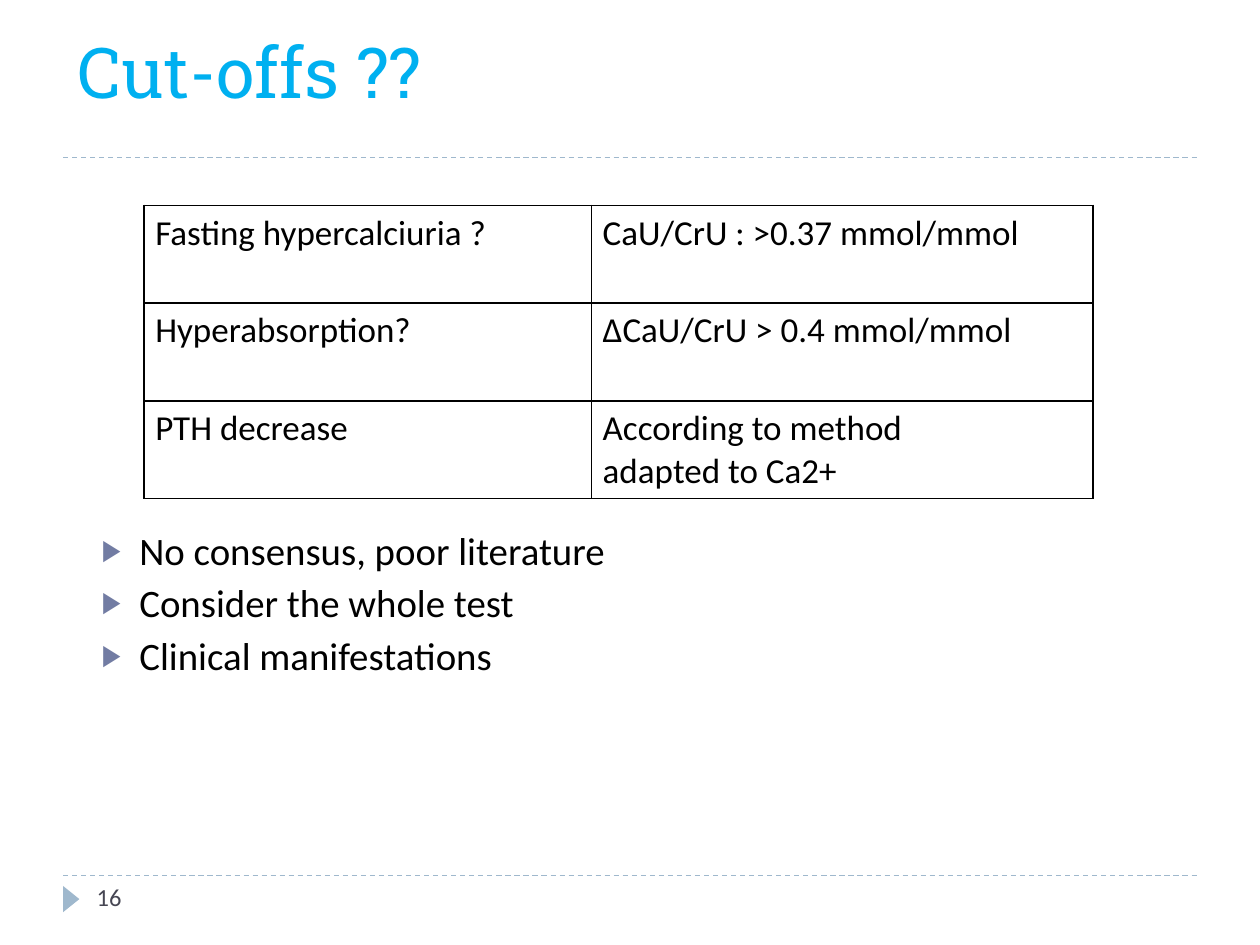
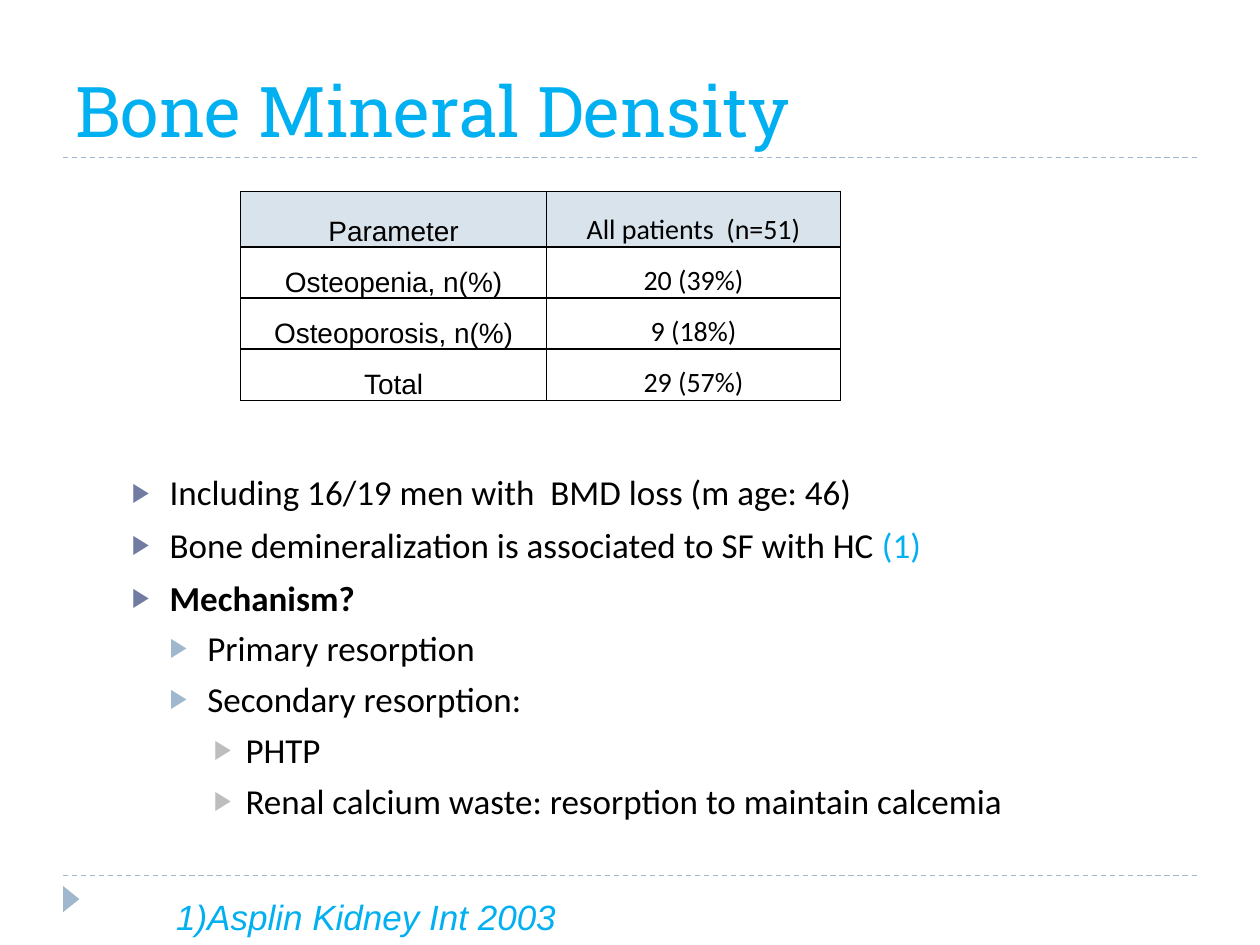
from lxml.etree import SubElement
from pptx import Presentation
from pptx.dml.color import RGBColor
from pptx.enum.dml import MSO_LINE
from pptx.enum.shapes import MSO_CONNECTOR, MSO_SHAPE
from pptx.enum.text import MSO_ANCHOR, PP_ALIGN
from pptx.oxml import parse_xml
from pptx.oxml.ns import nsdecls, qn
from pptx.util import Cm, Pt

BLACK = RGBColor(0x00, 0x00, 0x00)
WHITE = RGBColor(0xFF, 0xFF, 0xFF)
SKY = RGBColor(0x00, 0xB0, 0xF0)
SLATE = RGBColor(0x46, 0x46, 0x53)
INDIGO = RGBColor(0x72, 0x7C, 0xA3)
STEEL = RGBColor(0x9F, 0xB8, 0xCD)
SILVER = RGBColor(0xBD, 0xBD, 0xBD)
HEADER_BLUE = RGBColor(0xD9, 0xE3, 0xEB)

TITLE_FONT, BODY_FONT, LABEL_FONT = "Roboto Slab", "Calibri", "Arial"

# Per outline level: left margin (cm), hanging indent (cm), space before, bullet colour
LEVELS = [
    (0.76, 0.76, Pt(6), INDIGO),
    (1.52, 0.76, Pt(5), STEEL),
    (2.29, 0.64, Pt(5), SILVER),
]


def style_run(run, size, font=BODY_FONT, color=BLACK, bold=False, italic=False):
    run.font.size = Pt(size)
    run.font.name = font
    run.font.color.rgb = color
    run.font.bold = bold
    run.font.italic = italic


def add_bullet(paragraph, level):
    margin, hanging, space, color = LEVELS[level]
    paragraph.level = level
    paragraph.space_before = space
    properties = paragraph._p.get_or_add_pPr()
    properties.set("marL", str(Cm(margin)))
    properties.set("indent", str(-Cm(hanging)))
    bullet_color = SubElement(properties, qn("a:buClr"))
    SubElement(bullet_color, qn("a:srgbClr"), val=str(color))
    SubElement(properties, qn("a:buSzPct"), val="76000")
    SubElement(properties, qn("a:buFont"), typeface=LABEL_FONT)
    SubElement(properties, qn("a:buChar"), char="▶")


def add_borders(cell):
    properties = cell._tc.get_or_add_tcPr()
    for position, side in enumerate("LRTB"):
        properties.insert(position, parse_xml(
            f'<a:ln{side} {nsdecls("a")} w="{Pt(1)}"><a:solidFill>'
            f'<a:srgbClr val="{BLACK}"/></a:solidFill></a:ln{side}>'))


class Deck:
    """Holds the presentation, its shared style and the current page."""

    def __init__(self):
        self.presentation = Presentation()
        self.presentation.slide_width = Cm(25.4)
        self.presentation.slide_height = Cm(19.05)
        self.page = None

    def add_page(self, title, left, top, height):
        self.page = self.presentation.slides.add_slide(self.presentation.slide_layouts[6])
        self.page.background.fill.solid()
        self.page.background.fill.fore_color.rgb = WHITE
        for y in (17.65, 3.18):
            self.add_rule(y)
        self.add_footer_marker()
        self.add_text(title, left, top, 22.86, height, MSO_ANCHOR.BOTTOM,
                      size=40, font=TITLE_FONT, color=SKY)

    def add_rule(self, y):
        rule = self.page.shapes.add_connector(
            MSO_CONNECTOR.STRAIGHT, Cm(1.27), Cm(y), Cm(24.13), Cm(y))
        rule.line.color.rgb = STEEL
        rule.line.width = Pt(0.75)
        rule.line.dash_style = MSO_LINE.DASH
        SubElement(rule._element.spPr, qn("a:effectLst"))

    def add_footer_marker(self):
        marker = self.page.shapes.add_shape(
            MSO_SHAPE.ISOSCELES_TRIANGLE, Cm(1.17), Cm(17.96), Cm(0.53), Cm(0.33))
        marker.rotation = 90
        marker.shadow.inherit = False
        marker.fill.solid()
        marker.fill.fore_color.rgb = STEEL
        marker.line.fill.background()

    def add_box(self, left, top, width, height):
        box = self.page.shapes.add_textbox(Cm(left), Cm(top), Cm(width), Cm(height))
        box.text_frame.word_wrap = True
        return box.text_frame

    def add_text(self, text, left, top, width, height, anchor=MSO_ANCHOR.TOP, **style):
        frame = self.add_box(left, top, width, height)
        frame.vertical_anchor = anchor
        frame.text = text
        style_run(frame.paragraphs[0].runs[0], **style)

    def add_bullets(self, items, left, top, width, height, size, line_spacing=None):
        """Add an outline; each item is a level and its (text, style) spans."""
        frame = self.add_box(left, top, width, height)
        for index, (level, *spans) in enumerate(items):
            paragraph = frame.add_paragraph() if index else frame.paragraphs[0]
            paragraph.line_spacing = line_spacing
            add_bullet(paragraph, level)
            for text, style in spans:
                span = paragraph.add_run()
                span.text = text
                style_run(span, size, **style)

    def add_table(self, rows, left, top, widths, heights, size, fonts, fills,
                  insets, anchor=MSO_ANCHOR.TOP, align=PP_ALIGN.LEFT, line_spacing=None):
        """Add a bordered table with one font per column and one fill (or None) per row."""
        table = self.page.shapes.add_table(
            len(rows), len(widths), Cm(left), Cm(top),
            Cm(sum(widths)), Cm(sum(heights))).table
        table.first_row = table.horz_banding = False
        for column, width in zip(table.columns, widths):
            column.width = Cm(width)
        for row, height, texts, fill in zip(table.rows, heights, rows, fills):
            row.height = Cm(height)
            for cell, text, font in zip(row.cells, texts, fonts):
                cell.text = text
                cell.vertical_anchor = anchor
                cell.margin_left = cell.margin_right = Cm(insets[0])
                cell.margin_top = cell.margin_bottom = Cm(insets[1])
                if fill is None:
                    cell.fill.background()
                else:
                    cell.fill.solid()
                    cell.fill.fore_color.rgb = fill
                add_borders(cell)
                for paragraph in cell.text_frame.paragraphs:
                    paragraph.alignment = align
                    paragraph.line_spacing = line_spacing
                    for run in paragraph.runs:
                        style_run(run, size, font)


def build_cutoffs(deck):
    deck.add_page("Cut-offs ??", 1.32, 0, 2.39)
    deck.add_text("16", 1.7, 17.65, 5.51, 1.02, size=14, color=SLATE)
    cutoffs = [
        ("Fasting hypercalciuria ?", "CaU/CrU : >0.37 mmol/mmol"),
        ("Hyperabsorption?", "ΔCaU/CrU > 0.4 mmol/mmol"),
        ("PTH decrease", "According to method\nadapted to Ca2+"),
    ]
    deck.add_table(cutoffs, 2.9, 4.14, [9.02, 10.11], [1.97] * 3, size=20,
                   fonts=[BODY_FONT] * 2, fills=[WHITE] * 3, insets=(0.23, 0.13))
    remarks = ["No consensus, poor literature", "Consider the whole test",
               "Clinical manifestations"]
    deck.add_bullets([(0, (remark, {})) for remark in remarks],
                     1.8, 10.59, 15.44, 3.33, size=22.2, line_spacing=0.9)


def build_bone_density(deck):
    deck.add_page("Bone Mineral Density", 1.27, 0.43, 2.74)
    density = [
        ("Parameter", "All patients  (n=51)"),
        ("Osteopenia, n(%)", "20 (39%)"),
        ("Osteoporosis, n(%)", "9 (18%)"),
        ("Total", "29 (57%)"),
    ]
    deck.add_table(density, 4.85, 3.86, [6.17, 5.92], [1.12] + [1.03] * 3, size=16,
                   fonts=[LABEL_FONT, BODY_FONT], fills=[HEADER_BLUE] + [None] * 3,
                   insets=(0.08, 0), anchor=MSO_ANCHOR.BOTTOM,
                   align=PP_ALIGN.CENTER, line_spacing=1.5)
    findings = [
        (0, ("Including 16/19 men with  BMD loss (m age: 46)", {})),
        (0, ("Bone demineralization is associated to SF with HC ", {}),
            ("(1)", {"color": SKY})),
        (0, ("Mechanism?", {"bold": True})),
        (1, ("Primary resorption", {})),
        (1, ("Secondary resorption:", {})),
        (2, ("PHTP", {})),
        (2, ("Renal calcium waste: resorption to maintain calcemia", {})),
    ]
    deck.add_bullets(findings, 2.41, 9.37, 20.4, 8.03, size=20)
    deck.add_text("1)Asplin Kidney Int 2003", 3.3, 17.93, 21.54, 1.12,
                  size=20, font=LABEL_FONT, color=SKY, italic=True)


def main():
    deck = Deck()
    build_cutoffs(deck)
    build_bone_density(deck)
    deck.presentation.save("out.pptx")


if __name__ == "__main__":
    main()
